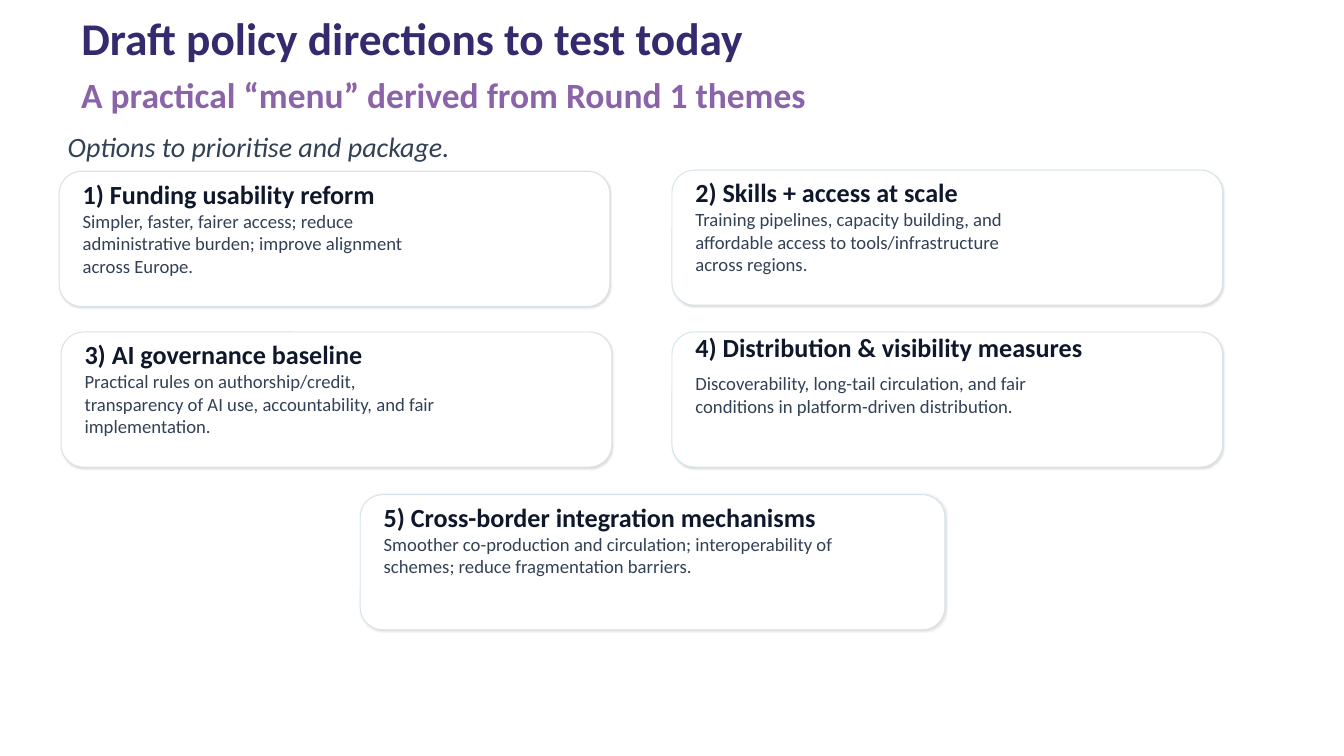
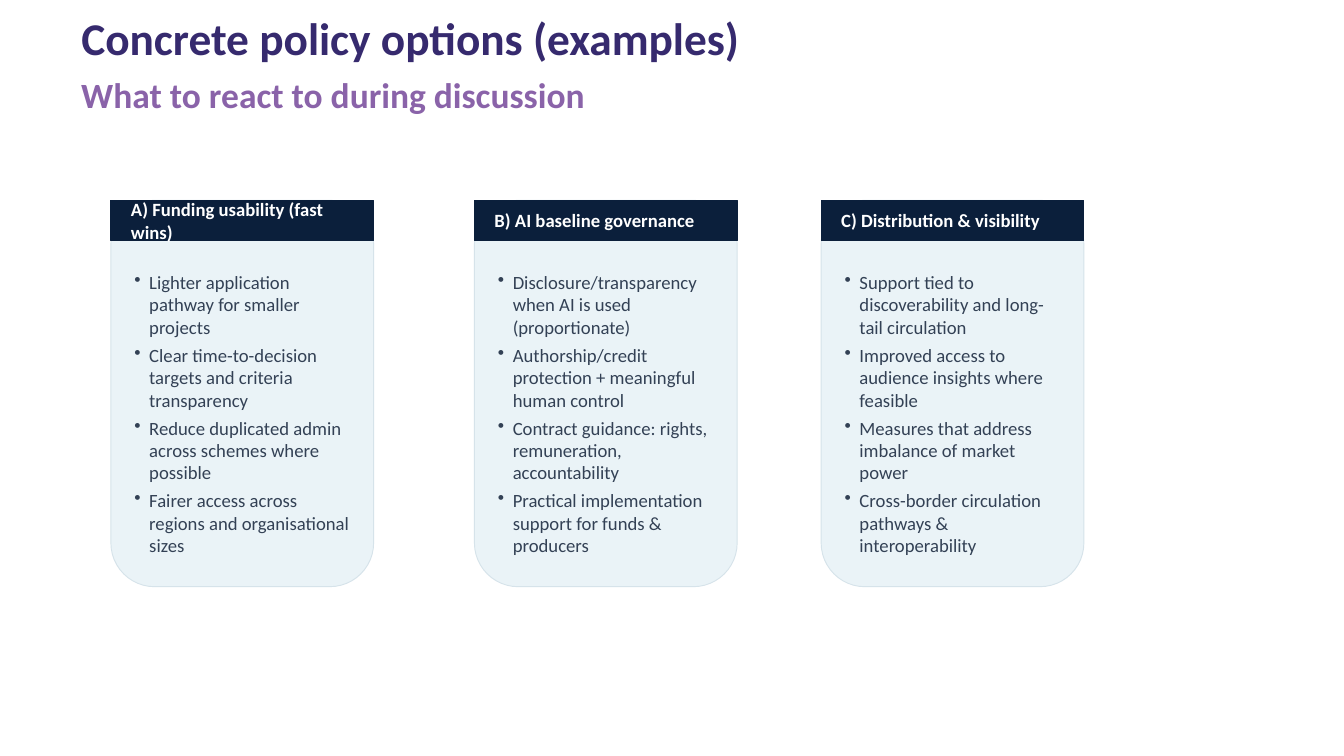
import pptx
import pptx.util
import pptx.dml.color
import pptx.enum.shapes
import pptx.enum.text
import pptx.oxml
import pptx.oxml.ns
from lxml import etree

Pt = pptx.util.Pt
SHAPES = pptx.enum.shapes.MSO_SHAPE
ANCHORS = pptx.enum.text.MSO_ANCHOR
FONT = "Calibri"
PURPLE = "362A6E"
LILAC = "8A63A9"
INK = "0F172A"
SLATE = "334155"
NAVY = "0B1F3B"
WHITE = "FFFFFF"
PALE = "EAF3F7"
BORDER = "D6E3EA"

CARDS = [
    ((63.4, 183.6, 590, 144.7), (13, 390, 21.6), (37.4, 390), "1) Funding usability reform",
     "Simpler, faster, fairer access; reduce administrative burden; improve alignment across Europe."),
    ((720, 182.2, 590, 144.7), (13, 390, 21.6), (37.4, 390), "2) Skills + access at scale",
     "Training pipelines, capacity building, and affordable access to tools/infrastructure across regions."),
    ((65.5, 355.7, 590, 144.7), (13, 390, 21.6), (37.4, 390), "3) AI governance baseline",
     "Practical rules on authorship/credit, transparency of AI use, accountability, and fair implementation."),
    ((720, 355.7, 590, 144.7), (13, 470, 5.8), (39.6, 390), "4) Distribution & visibility measures",
     "Discoverability, long-tail circulation, and fair conditions in platform-driven distribution."),
    ((386, 530, 626.4, 144.7), (13, 501, 21.6), (37.4, 501), "5) Cross-border integration mechanisms",
     "Smoother co-production and circulation; interoperability of schemes; reduce fragmentation barriers."),
]

PANELS = [
    (118.8, "A) Funding usability (fast wins)", [
        "Lighter application pathway for smaller projects",
        "Clear time-to-decision targets and criteria transparency",
        "Reduce duplicated admin across schemes where possible",
        "Fairer access across regions and organisational sizes",
    ]),
    (508.3, "B) AI baseline governance", [
        "Disclosure/transparency when AI is used (proportionate)",
        "Authorship/credit protection + meaningful human control",
        "Contract guidance: rights, remuneration, accountability",
        "Practical implementation support for funds & producers",
    ]),
    (879.8, "C) Distribution & visibility", [
        "Support tied to discoverability and long-tail circulation",
        "Improved access to audience insights where feasible",
        "Measures that address imbalance of market power",
        "Cross-border circulation pathways & interoperability",
    ]),
]


def colour(value):
    return pptx.dml.color.RGBColor.from_string(value)


def add_box(slide, kind, box, fill, line):
    shape = slide.shapes.add_shape(kind, *map(Pt, box))
    shape.shadow.inherit = False
    shape.fill.solid()
    shape.fill.fore_color.rgb = colour(fill)
    shape.line.color.rgb = colour(line)
    shape.line.width = Pt(1)
    return shape


def add_soft_shadow(shape):
    effects = shape._element.spPr.find(pptx.oxml.ns.qn("a:effectLst"))
    effects.append(pptx.oxml.parse_xml(
        f'<a:outerShdw {pptx.oxml.ns.nsdecls("a")} blurRad="{Pt(2)}" dist="{Pt(1)}" dir="2700000" '
        'algn="tl" rotWithShape="0"><a:srgbClr val="000000"><a:alpha val="12000"/></a:srgbClr></a:outerShdw>'))


def add_bullet(paragraph):
    properties = paragraph._p.get_or_add_pPr()
    properties.set("marL", str(Pt(16)))
    properties.set("indent", str(-Pt(16)))
    bullet = etree.SubElement(properties, pptx.oxml.ns.qn("a:buChar"))
    bullet.set("char", "•")
    paragraph.space_after = Pt(6)


def add_text(slide, box, lines, size, text_colour, bold=False, italic=False,
             anchor=ANCHORS.MIDDLE, spacing=None, bulleted=False):
    frame = slide.shapes.add_textbox(*map(Pt, box)).text_frame
    frame.word_wrap = True
    frame.vertical_anchor = anchor
    frame.text = "\n".join(lines)
    for paragraph in frame.paragraphs:
        if bulleted:
            add_bullet(paragraph)
        if spacing:
            paragraph.line_spacing = spacing
        for run in paragraph.runs:
            run.font.name = FONT
            run.font.size = Pt(size)
            run.font.bold = bold
            run.font.italic = italic
            run.font.color.rgb = colour(text_colour)


def add_titled_slide(presentation, title, subtitle):
    slide = presentation.slides.add_slide(presentation.slide_layouts[6])
    slide.background.fill.solid()
    slide.background.fill.fore_color.rgb = colour(WHITE)
    add_text(slide, (80, 15.8, 1242, 56.2), [title], 48.6, PURPLE, bold=True, spacing=0.9)
    add_text(slide, (80, 83.5, 1252, 44.6), [subtitle], 38, LILAC, bold=True,
             anchor=ANCHORS.TOP, spacing=0.8)
    return slide


def add_card(slide, box, heading_place, body_place, heading, body):
    left, top = box[:2]
    heading_offset, heading_width, heading_height = heading_place
    body_offset, body_width = body_place
    add_soft_shadow(add_box(slide, SHAPES.ROUNDED_RECTANGLE, box, WHITE, BORDER))
    add_text(slide, (left + 18, top + heading_offset, heading_width, heading_height),
             [heading], 28, INK, bold=True)
    add_text(slide, (left + 18, top + body_offset, body_width, 61.2), [body], 20, SLATE,
             anchor=ANCHORS.TOP)


def add_panel(slide, box, heading, bullets):
    left, top, width, height = box
    add_box(slide, SHAPES.ROUNDED_RECTANGLE, box, PALE, BORDER)
    add_box(slide, SHAPES.RECTANGLE, (left, top, width, 43.2), NAVY, NAVY)
    add_text(slide, (left + 14.4, top + 8.6, width - 28.8, 26), [heading], 20, WHITE, bold=True)
    add_text(slide, (left + 18, top + 57.6, width - 36, height - 72), bullets, 20, SLATE,
             bulleted=True)


def build_directions(presentation):
    slide = add_titled_slide(presentation, "Draft policy directions to test today",
                             "A practical “menu” derived from Round 1 themes")
    for card in CARDS:
        add_card(slide, *card)
    add_text(slide, (65.5, 142.6, 1049, 28), ["Options to prioritise and package."], 30, SLATE,
             italic=True)


def build_options(presentation):
    slide = add_titled_slide(presentation, "Concrete policy options (examples)",
                             "What to react to during discussion")
    for left, heading, bullets in PANELS:
        add_panel(slide, (left, 214.6, 281.5, 414), heading, bullets)


def main():
    presentation = pptx.Presentation()
    presentation.slide_width = Pt(1440)
    presentation.slide_height = Pt(810)
    build_directions(presentation)
    build_options(presentation)
    presentation.save("out.pptx")


if __name__ == "__main__":
    main()
